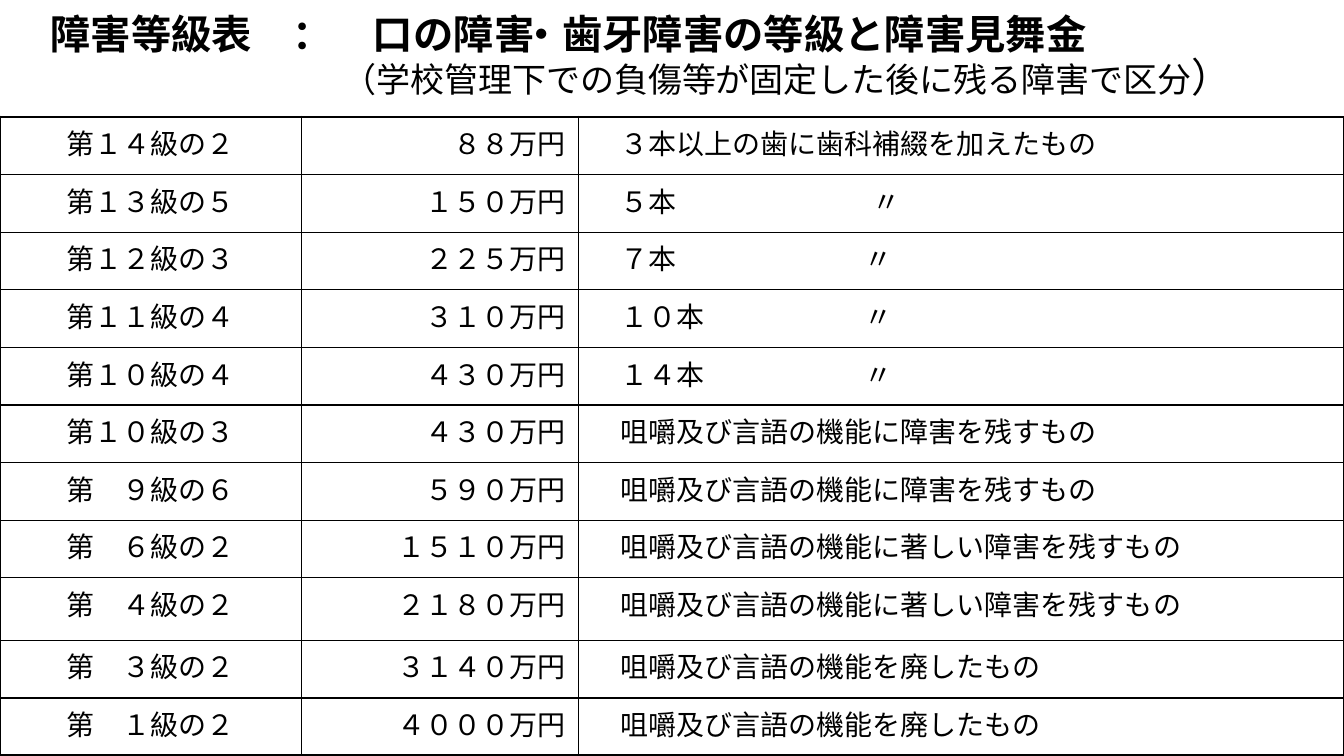
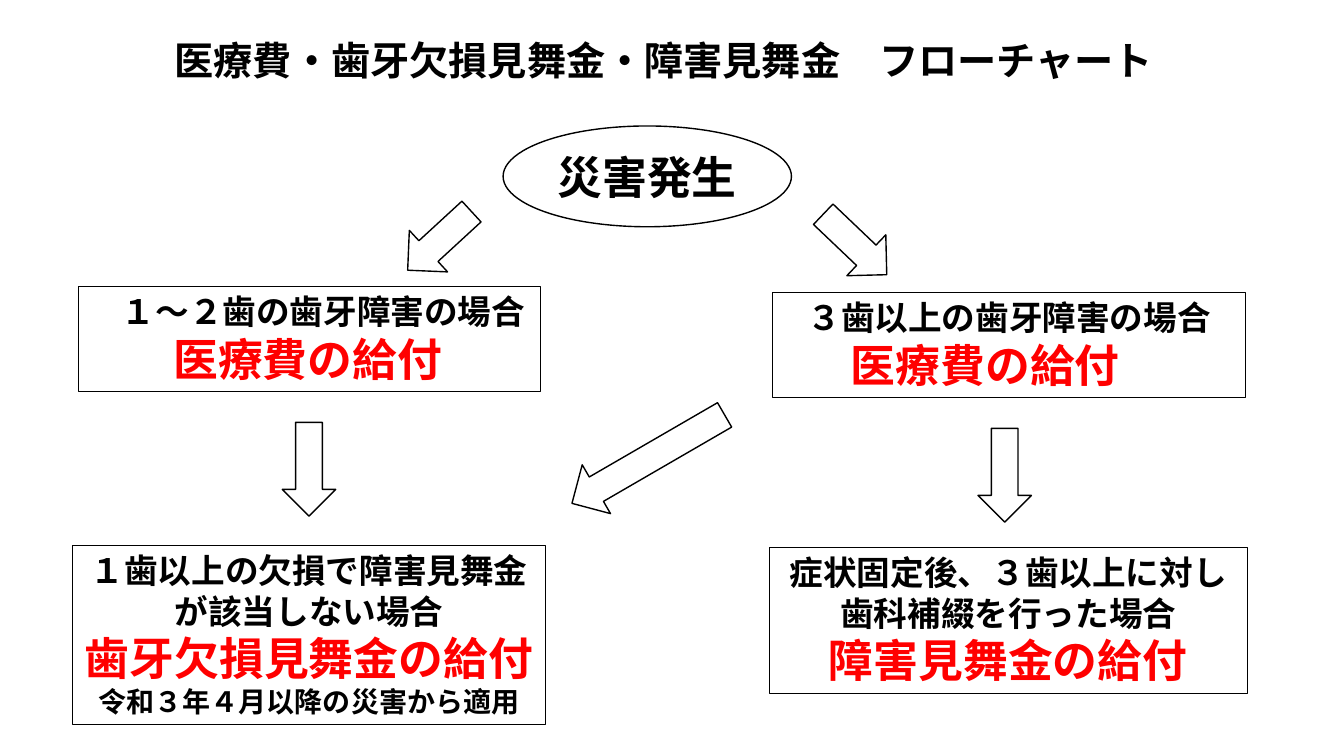
from dataclasses import dataclass

from lxml.etree import SubElement
from pptx import Presentation
from pptx.dml.color import RGBColor
from pptx.enum.shapes import MSO_SHAPE
from pptx.enum.text import MSO_ANCHOR, MSO_AUTO_SIZE, PP_ALIGN
from pptx.oxml import parse_xml
from pptx.oxml.ns import nsdecls, qn
from pptx.util import Inches, Pt

COLORS = {"ink": "000000", "paper": "FFFFFF", "benefit": "FF0000"}
BODY_FONT = "Noto Sans CJK JP"
HEADING_FONT = "Arial"
LINE_HEIGHT = 1.2

TABLE_TOP, TABLE_HEIGHT = 1.16, 6.34
COLUMN_WIDTHS = (2.99, 2.75, 7.59)
COLUMN_ALIGNS = (PP_ALIGN.CENTER, PP_ALIGN.RIGHT, PP_ALIGN.LEFT)
COLUMN_LEFT_MARGINS = (0.13, 0.13, 0.41)
TALL_ROW, TALL_ROW_HEIGHT = 8, 0.62
OUTER_BORDER, INNER_BORDER = 2.25, 1


@dataclass(frozen=True)
class Grade:
    name: str
    amount: str
    condition: str
    ditto_tab: float = 2.42


@dataclass(frozen=True)
class Line:
    text: str
    size: float
    color: str = "ink"
    indent: float = 0  # an indented line is left-aligned, others are centred


@dataclass(frozen=True)
class Stage:
    left: float
    top: float
    width: float
    height: float
    lines: tuple[Line, ...]
    outline: float = 0.75
    preset: MSO_SHAPE = MSO_SHAPE.RECTANGLE
    anchor: MSO_ANCHOR = MSO_ANCHOR.TOP


@dataclass(frozen=True)
class Arrow:
    left: float
    top: float
    width: float
    height: float
    rotation: float = 0


GRADES = (
    Grade("第１４級の２", "８８万円", "３本以上の歯に歯科補綴を加えたもの"),
    Grade("第１３級の５", "１５０万円", "５本\t〃", 2.5),
    Grade("第１２級の３", "２２５万円", "７本\t〃"),
    Grade("第１１級の４", "３１０万円", "１０本\t〃"),
    Grade("第１０級の４", "４３０万円", "１４本\t〃"),
    Grade("第１０級の３", "４３０万円", "咀嚼及び言語の機能に障害を残すもの"),
    Grade("第　９級の６", "５９０万円", "咀嚼及び言語の機能に障害を残すもの"),
    Grade("第　６級の２", "１５１０万円", "咀嚼及び言語の機能に著しい障害を残すもの"),
    Grade("第　４級の２", "２１８０万円", "咀嚼及び言語の機能に著しい障害を残すもの"),
    Grade("第　３級の２", "３１４０万円", "咀嚼及び言語の機能を廃したもの"),
    Grade("第　１級の２", "４０００万円", "咀嚼及び言語の機能を廃したもの"),
)

STAGES = (
    Stage(4.99, 1.25, 2.86, 1, (Line("災害発生", 32),),
          1, MSO_SHAPE.OVAL, MSO_ANCHOR.MIDDLE),
    Stage(0.78, 2.84, 4.58, 1.04, (
        Line("１～２歯の歯牙障害の場合", 24, indent=0.33),
        Line("医療費の給付", 32, "benefit", indent=0.84))),
    Stage(7.66, 2.9, 4.69, 1.04, (
        Line("３歯以上の歯牙障害の場合", 24, indent=0.25),
        Line("医療費の給付", 32, "benefit", indent=0.68))),
    Stage(7.63, 5.43, 4.74, 1.45, (
        Line("症状固定後、３歯以上に対し", 24),
        Line("歯科補綴を行った場合", 24),
        Line("障害見舞金の給付", 32, "benefit"))),
    Stage(0.72, 5.41, 4.69, 1.78, (
        Line("１歯以上の欠損で障害見舞金", 24),
        Line("が該当しない場合", 24),
        Line("歯牙欠損見舞金の給付", 32, "benefit"),
        Line("令和３年４月以降の災害から適用", 20))),
)

ARROWS = (
    Arrow(4.08, 1.96, 0.56, 0.86, 47.4),
    Arrow(8.2, 1.99, 0.56, 0.87, 313.6),
    Arrow(6.15, 3.68, 0.56, 1.75, 59.9),
    Arrow(2.8, 4.19, 0.53, 0.93),
    Arrow(9.7, 4.25, 0.53, 0.93),
)


def rgb(name: str) -> RGBColor:
    return RGBColor.from_string(COLORS[name])


def add_run(paragraph, text: str, size: float, bold: bool = False,
            color: str = "ink", font: str = BODY_FONT, tracking: float = 0) -> None:
    run = paragraph.add_run()
    run.text = text
    run.font.size = Pt(size)
    run.font.bold = bold
    run.font.color.rgb = rgb(color)
    run.font.name = font
    properties = run._r.get_or_add_rPr()
    SubElement(properties, qn("a:ea"), typeface=font)
    if tracking:
        properties.set("spc", str(round(tracking * 100)))


def format_paragraph(paragraph, align: PP_ALIGN, spacing: float, indent: float = 0) -> None:
    paragraph.alignment = align
    paragraph.line_spacing = Pt(spacing)
    if indent:
        properties = paragraph._p.get_or_add_pPr()
        properties.set("marL", str(Inches(indent)))
        properties.set("indent", "0")


def paint(shape, line_color: str, line_width: float) -> None:
    shape.fill.solid()
    shape.fill.fore_color.rgb = rgb("paper")
    shape.line.color.rgb = rgb(line_color)
    shape.line.width = Pt(line_width)


def add_titled_slide(deck, left: float, top: float, width: float, height: float):
    """Add a slide and return it with the text frame of its placed title."""
    slide = deck.slides.add_slide(deck.slide_layouts[5])
    title = slide.shapes.title
    title.left, title.top = Inches(left), Inches(top)
    title.width, title.height = Inches(width), Inches(height)
    paint(title, "paper", 1)
    frame = title.text_frame
    frame.word_wrap = True
    frame.auto_size = MSO_AUTO_SIZE.NONE
    frame.vertical_anchor = MSO_ANCHOR.MIDDLE
    return slide, frame


def set_borders(cell, widths: dict[str, float]) -> None:
    """Border widths in points, keyed by side in the order L, R, T, B."""
    properties = cell._tc.get_or_add_tcPr()
    for position, (side, width) in enumerate(widths.items()):
        properties.insert(position, parse_xml(
            f'<a:ln{side} {nsdecls("a")} w="{Pt(width)}"><a:solidFill>'
            f'<a:srgbClr val="{COLORS["ink"]}"/></a:solidFill></a:ln{side}>'))


def add_tab_stop(paragraph, position: float) -> None:
    tabs = SubElement(paragraph._p.get_or_add_pPr(), qn("a:tabLst"))
    SubElement(tabs, qn("a:tab"), pos=str(Inches(position)), algn="l")


def fill_grade_cell(cell, text: str, row: int, column: int) -> None:
    cell.fill.solid()
    cell.fill.fore_color.rgb = rgb("paper")
    cell.margin_left = Inches(COLUMN_LEFT_MARGINS[column])
    cell.margin_right = Inches(0.13)
    cell.margin_top = Inches(0.12)
    paragraph = cell.text_frame.paragraphs[0]
    format_paragraph(paragraph, COLUMN_ALIGNS[column], 20 * LINE_HEIGHT)
    if "\t" in text:
        add_tab_stop(paragraph, GRADES[row].ditto_tab)
    add_run(paragraph, text, 20)
    outer_sides = {"L": column == 0, "R": column == len(COLUMN_WIDTHS) - 1,
                   "T": row == 0, "B": row == len(GRADES) - 1}
    set_borders(cell, {side: OUTER_BORDER if outer else INNER_BORDER
                       for side, outer in outer_sides.items()})


def add_grade_table(slide) -> None:
    table = slide.shapes.add_table(
        len(GRADES), len(COLUMN_WIDTHS), Inches(0), Inches(TABLE_TOP),
        Inches(sum(COLUMN_WIDTHS)), Inches(TABLE_HEIGHT)).table
    table.first_row = table.horz_banding = False
    for column, width in zip(table.columns, COLUMN_WIDTHS):
        column.width = Inches(width)
    row_height = (TABLE_HEIGHT - TALL_ROW_HEIGHT) / (len(GRADES) - 1)
    for row, grade in enumerate(GRADES):
        table.rows[row].height = Inches(TALL_ROW_HEIGHT if row == TALL_ROW else row_height)
        for column, text in enumerate((grade.name, grade.amount, grade.condition)):
            fill_grade_cell(table.cell(row, column), text, row, column)


def add_outlined(slide, preset: MSO_SHAPE, area: Stage | Arrow, outline: float):
    shape = slide.shapes.add_shape(preset, Inches(area.left), Inches(area.top),
                                   Inches(area.width), Inches(area.height))
    shape.shadow.inherit = False
    paint(shape, "ink", outline)
    return shape


def add_stage(slide, stage: Stage) -> None:
    frame = add_outlined(slide, stage.preset, stage, stage.outline).text_frame
    frame.word_wrap = stage.preset == MSO_SHAPE.RECTANGLE
    frame.vertical_anchor = stage.anchor
    for number, line in enumerate(stage.lines):
        paragraph = frame.add_paragraph() if number else frame.paragraphs[0]
        align = PP_ALIGN.LEFT if line.indent else PP_ALIGN.CENTER
        format_paragraph(paragraph, align, line.size * LINE_HEIGHT, line.indent)
        add_run(paragraph, line.text, line.size, True, line.color)


def add_arrow(slide, arrow: Arrow) -> None:
    add_outlined(slide, MSO_SHAPE.DOWN_ARROW, arrow, 1).rotation = arrow.rotation


def build_grade_slide(deck) -> None:
    slide, title = add_titled_slide(deck, 0, 0, 13.33, 1.14)
    heading, note = title.paragraphs[0], title.add_paragraph()
    format_paragraph(heading, PP_ALIGN.LEFT, 31, 0.4)
    for text, tracking in (("障害等級表　：　口の障", 0), ("害・", -9),
                           ("歯牙障害の等級と障害見舞金", 0)):
        add_run(heading, text, 28.8, True, font=HEADING_FONT, tracking=tracking)
    format_paragraph(note, PP_ALIGN.LEFT, 31, 3.3)
    add_run(note, "（学校管理下での負傷等が固定した後に残る障害で区分", 24.3, font=HEADING_FONT)
    add_run(note, "）", 28.8, font=HEADING_FONT)
    add_grade_table(slide)


def build_flow_slide(deck) -> None:
    slide, title = add_titled_slide(deck, 0.78, 0.13, 11.61, 0.93)
    heading = title.paragraphs[0]
    format_paragraph(heading, PP_ALIGN.CENTER, 28 * LINE_HEIGHT)
    add_run(heading, "医療費・歯牙欠損見舞金・障害見舞金　フローチャート", 28, True)
    for stage in STAGES:
        add_stage(slide, stage)
    for arrow in ARROWS:
        add_arrow(slide, arrow)


def main() -> None:
    deck = Presentation()
    deck.slide_width, deck.slide_height = Inches(13.33), Inches(7.5)
    build_grade_slide(deck)
    build_flow_slide(deck)
    deck.save("out.pptx")


if __name__ == "__main__":
    main()
